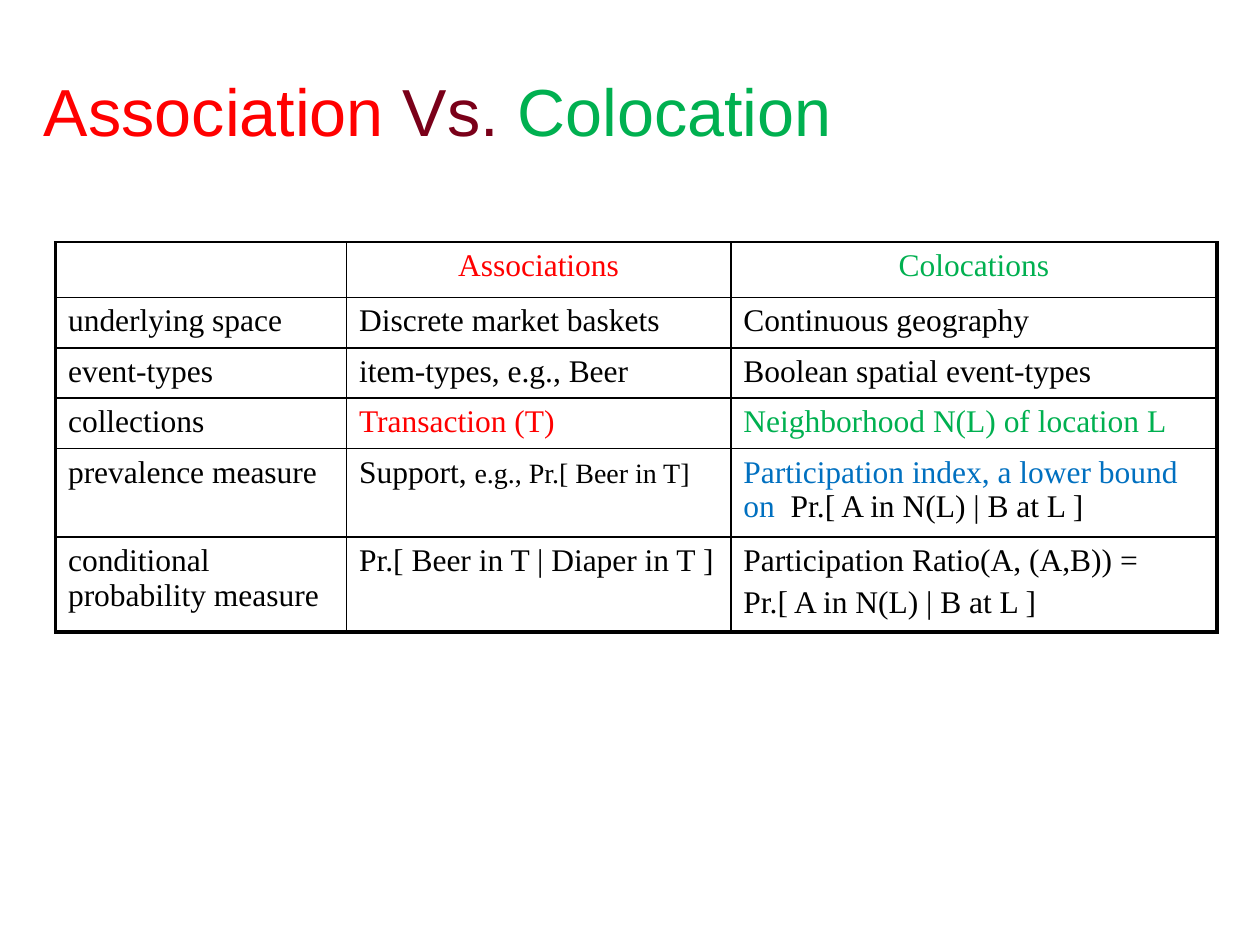
from lxml.etree import SubElement
from pptx import Presentation
from pptx.dml.color import RGBColor
from pptx.enum.text import MSO_ANCHOR, PP_ALIGN
from pptx.oxml.ns import qn
from pptx.util import Inches, Pt

COLORS = {"black": "000000", "red": "FF0000", "maroon": "7A0019",
          "green": "00B050", "blue": "0070C0"}
TITLE = [("Association", "red"), (" Vs. ", "maroon"), ("Colocation", "green")]

COLUMN_WIDTHS = [2.31, 3.05, 3.86]
ROW_HEIGHTS = [0.44, 0.4, 0.4, 0.4, 0.65, 0.7]
THIN, THICK = 1, 2.25

# A cell is a list of paragraphs, a paragraph a list of (text, color[, size]).
ROWS = [
    [[], [[("Associations", "red")]], [[("Colocations", "green")]]],
    [[[("underlying space", "black")]],
     [[("Discrete market baskets", "black")]],
     [[("Continuous geography", "black")]]],
    [[[("event-types", "black")]],
     [[("item-types, e.g., Beer", "black")]],
     [[("Boolean spatial event-types", "black")]]],
    [[[("collections", "black")]],
     [[("Transaction (T)", "red")]],
     [[("Neighborhood N(L) of location L", "green")]]],
    [[[("prevalence measure", "black")]],
     [[("Support, ", "black"), ("e.g., Pr.[ Beer in T]", "black", 16)]],
     [[("Participation index, a lower bound on ", "blue"),
       (" Pr.[ A in N(L) | B at L ]", "black")]]],
    [[[("conditional probability measure", "black")]],
     [[("Pr.[ Beer in T | Diaper in T ]", "black")]],
     [[("Participation Ratio(A, (A,B)) =", "black")],
      [("Pr.[ A in N(L) | B at L ]", "black")]]],
]


def add_spans(para, spans, font_name, default_size):
    for text, color, *size in spans:
        span = para.add_run()
        span.text = text
        span.font.name = font_name
        span.font.size = Pt(size[0] if size else default_size)
        span.font.color.rgb = RGBColor.from_string(COLORS[color])


def set_borders(cell, widths):
    """Draw the left, right, top and bottom lines, ahead of the cell's fill."""
    properties = cell._tc.get_or_add_tcPr()
    for index, (side, width) in enumerate(zip("LRTB", widths)):
        line = SubElement(properties, qn(f"a:ln{side}"), w=str(Pt(width)))
        fill = SubElement(line, qn("a:solidFill"))
        SubElement(fill, qn("a:srgbClr"), val=COLORS["black"])
        properties.insert(index, line)


def add_title(page, left, top, width, height):
    box = page.shapes.add_textbox(left, top, width, height)
    frame = box.text_frame
    frame.word_wrap = True
    frame.vertical_anchor = MSO_ANCHOR.MIDDLE
    add_spans(frame.paragraphs[0], TITLE, "Arial", 38)


def fill_cell(cell, paragraphs, alignment):
    frame = cell.text_frame
    for index, spans in enumerate(paragraphs):
        para = frame.add_paragraph() if index else frame.paragraphs[0]
        para.alignment = alignment
        if index:
            para.space_before = Pt(4)
        add_spans(para, spans, "Times New Roman", 18)


def add_comparison(page, left, top, width, height):
    table = page.shapes.add_table(len(ROWS), len(COLUMN_WIDTHS),
                                  left, top, width, height).table
    table.first_row = table.horz_banding = False
    for column, column_width in zip(table.columns, COLUMN_WIDTHS):
        column.width = Inches(column_width)
    for row, row_height in zip(table.rows, ROW_HEIGHTS):
        row.height = Inches(row_height)

    last_row, last_column = len(ROWS) - 1, len(COLUMN_WIDTHS) - 1
    for r, row in enumerate(ROWS):
        for c, paragraphs in enumerate(row):
            cell = table.cell(r, c)
            cell.fill.background()
            set_borders(cell, [THICK if c == 0 else THIN,
                               THICK if c == last_column else THIN,
                               THIN,
                               THICK if r == last_row else THIN])
            fill_cell(cell, paragraphs,
                      PP_ALIGN.LEFT if r else PP_ALIGN.CENTER)


def main():
    deck = Presentation()
    deck.slide_width, deck.slide_height = Inches(10), Inches(7.5)
    page = deck.slides.add_slide(deck.slide_layouts[6])
    add_title(page, Inches(0.25), Inches(0.33), Inches(9.42), Inches(1.08))
    add_comparison(page, Inches(0.44), Inches(1.92),
                   Inches(sum(COLUMN_WIDTHS)), Inches(sum(ROW_HEIGHTS)))
    deck.save("out.pptx")


if __name__ == "__main__":
    main()
